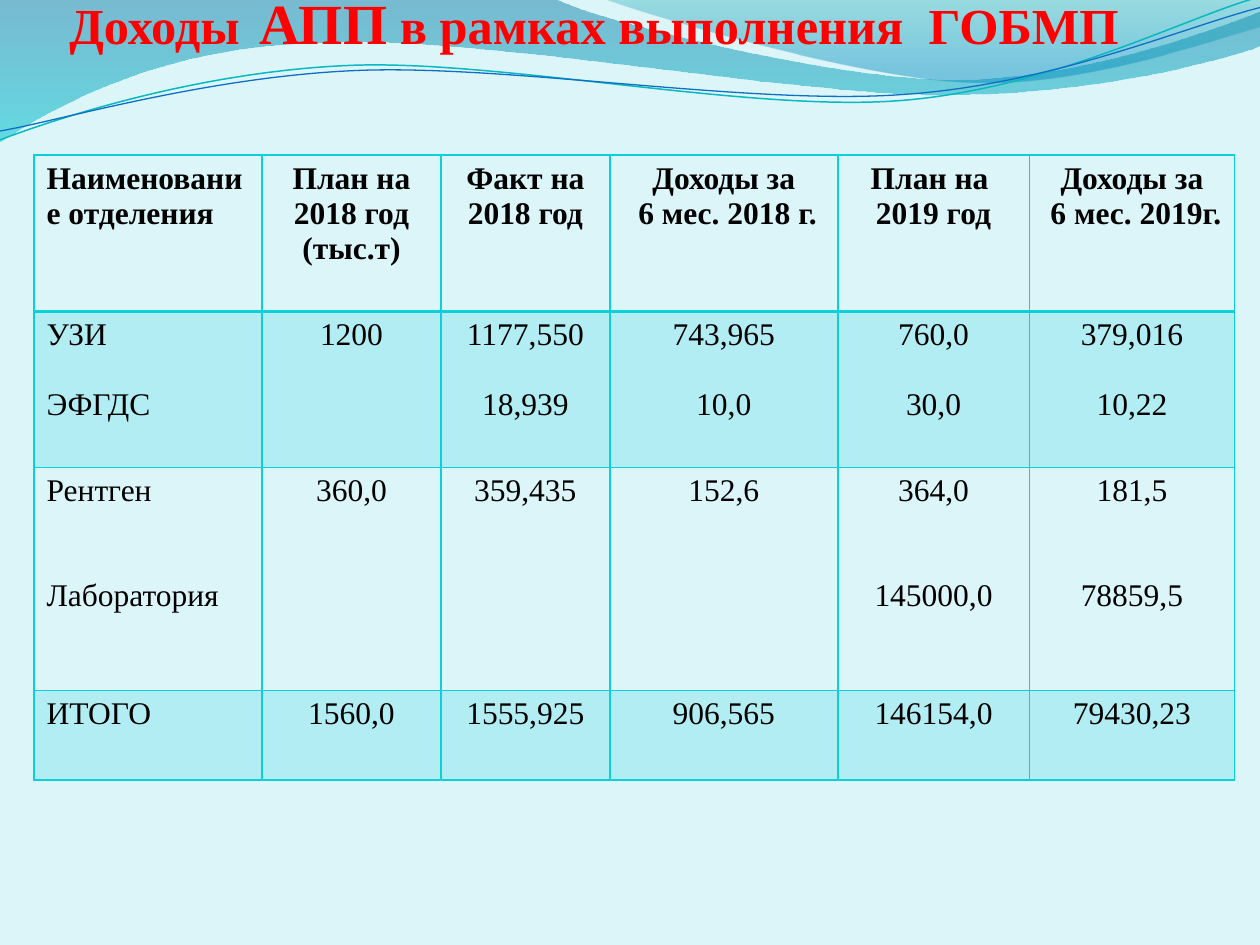
from pptx import Presentation
from pptx.dml.color import RGBColor
from pptx.enum.text import MSO_ANCHOR, PP_ALIGN
from pptx.oxml import parse_xml
from pptx.oxml.ns import nsdecls, qn
from pptx.util import Inches, Pt

FONT = "Times New Roman"
ACCENT = "0BD0D9"
RED = "FF0000"
BLACK = "000000"

# A wave is a list of steps: one point is a straight line, three are a Bézier curve.
UPPER_WAVE = [
    [(0, 0)], [(4.4, -0.01)],
    [(4.76, 0.17), (6.64, 0.63), (7.58, 0.63)],
    [(8.53, 0.63), (9.58, 0.26), (10, 0.09)],
    [(10.01, 0.36)],
    [(9.83, 0.44), (8.7, 0.76), (7.46, 0.75)],
    [(6.22, 0.75), (3.82, 0.28), (2.57, 0.34)],
    [(1.29, 0.36), (0.46, 0.83), (-0.01, 1.13)],
    [(0, 0)],
]
RIGHT_WAVE = [
    [(4.79, -0.01)],
    [(5.09, 0.11), (6.82, 0.62), (7.69, 0.65)],
    [(8.56, 0.69), (9.61, 0.32), (10, 0.21)],
    [(10, 0)],
    [(4.79, -0.01)],
]
TEAL_LINE = [
    [(0, 1.11)],
    [(0.48, 0.93), (1.58, 0.57), (2.77, 0.52)],
    [(3.95, 0.47), (5.93, 0.89), (7.13, 0.8)],
    [(8.33, 0.71), (9.38, 0.15), (9.98, -0.02)],
]
BLUE_LINE = [
    [(0, 1.04)],
    [(0.47, 0.96), (1.64, 0.61), (2.83, 0.56)],
    [(4.03, 0.51), (5.97, 0.84), (7.17, 0.75)],
    [(8.36, 0.67), (9.41, 0.21), (10, 0.06)],
]

TITLE_RUNS = [("Доходы", 28.8), (" ", 45), ("АПП", 32.4),
              (" в рамках выполнения  ГОБМП", 28.8)]
TITLE_END_SIZE = 50

COLUMN_WIDTHS = [1.81, 1.42, 1.34, 1.81, 1.52, 1.63]
ROW_HEIGHTS = [1.24, 1.24, 1.77, 0.71]
# Points above the second paragraph of a cell, row by row
PARAGRAPH_GAPS = [0, 20, 40, 0]
ROWS = [
    [["Наименование отделения"], ["План на 2018 год", "(тыс.т)"], ["Факт на 2018 год"],
     ["Доходы за", " 6 мес. 2018 г."], ["План на ", "2019 год"],
     ["Доходы за", " 6 мес. 2019г."]],
    [["УЗИ", "ЭФГДС"], ["1200"], ["1177,550", "18,939"], ["743,965", "10,0"],
     ["760,0", "30,0"], ["379,016", "10,22"]],
    [["Рентген", "Лаборатория"], ["360,0"], ["359,435"], ["152,6"],
     ["364,0", "145000,0"], ["181,5", "78859,5"]],
    [["ИТОГО"], ["1560,0"], ["1555,925"], ["906,565"], ["146154,0"], ["79430,23"]],
]


def rgb(value):
    return RGBColor.from_string(value)


def color_xml(value, alpha=100):
    return f'<a:srgbClr val="{value}"><a:alpha val="{alpha * 1000}"/></a:srgbClr>'


def bend_segments(shape, wave):
    """Join the straight segments of each three-point step into one Bézier curve."""
    segments = iter(list(shape._element.iter(qn("a:lnTo"))))
    for step in wave[1:]:
        first, *others = [next(segments) for _ in step]
        if others:
            curve = parse_xml(f'<a:cubicBezTo {nsdecls("a")}/>')
            first.addprevious(curve)
            for segment in (first, *others):
                curve.append(segment[0])
                segment.getparent().remove(segment)


def add_outline(slide, wave, closed):
    start, *rest = [(Inches(x), Inches(y)) for step in wave for x, y in step]
    builder = slide.shapes.build_freeform(*start)
    builder.add_line_segments(rest, close=closed)
    shape = builder.convert_to_shape()
    bend_segments(shape, wave)
    shape.shadow.inherit = False
    shape.fill.background()
    return shape


def add_wave_area(slide, wave, stops):
    """Stops are (position, colour, opacity), all in percent, from top to bottom."""
    shape = add_outline(slide, wave, closed=True)
    shape.line.fill.background()
    stops_xml = "".join(f'<a:gs pos="{position * 1000}">{color_xml(color, alpha)}</a:gs>'
                        for position, color, alpha in stops)
    gradient = parse_xml(f'<a:gradFill {nsdecls("a")} rotWithShape="1">'
                         f'<a:gsLst>{stops_xml}</a:gsLst>'
                         f'<a:lin ang="5400000" scaled="1"/></a:gradFill>')
    properties = shape._element.spPr
    properties.replace(properties.find(qn("a:noFill")), gradient)


def add_wave_line(slide, wave, color, width):
    shape = add_outline(slide, wave, closed=False)
    shape.line.color.rgb = rgb(color)
    shape.line.width = Pt(width)


def add_run(paragraph, text, size, color, bold):
    run = paragraph.add_run()
    run.text = text
    run.font.name = FONT
    run.font.size = Pt(size)
    run.font.bold = bold
    run.font.color.rgb = rgb(color)


def end_with_line_break(paragraph, size):
    size_xml = f'sz="{size * 100}"'
    paragraph._p.append(parse_xml(f'<a:br {nsdecls("a")}><a:rPr {size_xml}/></a:br>'))
    paragraph._p.append(parse_xml(
        f'<a:endParaRPr {nsdecls("a")} {size_xml}><a:latin typeface="{FONT}"/></a:endParaRPr>'))


def add_title(slide):
    box = slide.shapes.add_textbox(Inches(0.55), Inches(0.31), Inches(8.75), Inches(1))
    frame = box.text_frame
    frame.word_wrap = True
    frame.vertical_anchor = MSO_ANCHOR.BOTTOM
    frame.margin_left = frame.margin_right = frame.margin_bottom = 0
    paragraph = frame.paragraphs[0]
    for text, size in TITLE_RUNS:
        add_run(paragraph, text, size, RED, True)
    end_with_line_break(paragraph, TITLE_END_SIZE)


def style_cell(cell, top, bottom, filled):
    """Draw the borders, in points, and the tint of a cell."""
    properties = cell._tc.get_or_add_tcPr()
    for side, width in (("L", 1), ("R", 1), ("T", top), ("B", bottom)):
        properties.append(parse_xml(
            f'<a:ln{side} {nsdecls("a")} w="{Pt(width)}">'
            f'<a:solidFill>{color_xml(ACCENT)}</a:solidFill></a:ln{side}>'))
    fill = f'<a:solidFill {nsdecls("a")}>{color_xml(ACCENT, 20)}</a:solidFill>'
    properties.append(parse_xml(fill if filled else f'<a:noFill {nsdecls("a")}/>'))


def fill_cell(cell, lines, gap, alignment, bold):
    frame = cell.text_frame
    for i, line in enumerate(lines):
        paragraph = frame.add_paragraph() if i else frame.paragraphs[0]
        paragraph.alignment = alignment
        if i:
            paragraph.space_before = Pt(gap)
        add_run(paragraph, line, 18, BLACK, bold)


def add_income_table(slide):
    table = slide.shapes.add_table(
        len(ROWS), len(COLUMN_WIDTHS), Inches(0.27), Inches(1.23),
        Inches(sum(COLUMN_WIDTHS)), Inches(sum(ROW_HEIGHTS))).table
    table.first_row = table.horz_banding = False
    for column, width in zip(table.columns, COLUMN_WIDTHS):
        column.width = Inches(width)
    for r, (cells, height, gap) in enumerate(zip(ROWS, ROW_HEIGHTS, PARAGRAPH_GAPS)):
        table.rows[r].height = Inches(height)
        for c, lines in enumerate(cells):
            cell = table.cell(r, c)
            alignment = PP_ALIGN.CENTER if c else PP_ALIGN.LEFT
            fill_cell(cell, lines, gap, alignment, bold=r == 0)
            style_cell(cell, top=2 if r == 1 else 1, bottom=2 if r == 0 else 1,
                       filled=r % 2 == 1)


def main():
    presentation = Presentation()
    presentation.slide_width = Inches(10)
    presentation.slide_height = Inches(7.5)
    slide = presentation.slides.add_slide(presentation.slide_layouts[6])
    slide.background.fill.solid()
    slide.background.fill.fore_color.rgb = rgb("DBF5F9")

    add_wave_area(slide, UPPER_WAVE, [(0, "0074A1", 45), (100, "00C6CF", 55)])
    add_wave_area(slide, RIGHT_WAVE, [(0, "00A1A9", 30), (80, "008BBF", 45)])
    add_wave_line(slide, TEAL_LINE, "0AB8BF", 0.85)
    add_wave_line(slide, BLUE_LINE, "0F6FC6", 0.75)
    add_title(slide)
    add_income_table(slide)
    presentation.save("out.pptx")


if __name__ == "__main__":
    main()
